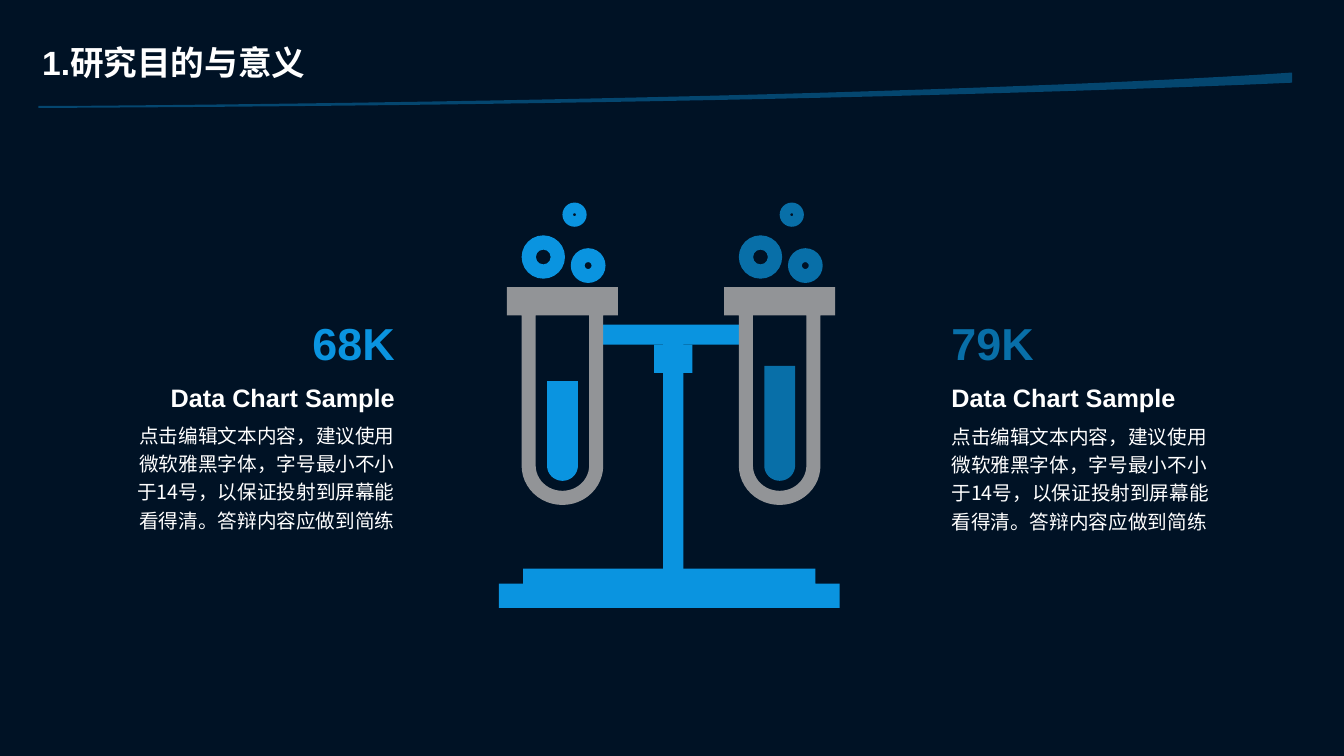
from dataclasses import dataclass
from math import cos, pi, sin

from lxml import etree
from pptx import Presentation
from pptx.dml.color import RGBColor
from pptx.enum.shapes import MSO_SHAPE
from pptx.enum.text import MSO_AUTO_SIZE, PP_ALIGN
from pptx.oxml.ns import qn
from pptx.util import Inches, Pt

RECTANGLE, DONUT = MSO_SHAPE.RECTANGLE, MSO_SHAPE.DONUT
LEFT, RIGHT = PP_ALIGN.LEFT, PP_ALIGN.RIGHT
GROW = MSO_AUTO_SIZE.SHAPE_TO_FIT_TEXT


@dataclass(frozen=True)
class Theme:
    night: str = "001225"
    bright: str = "0A94E0"
    deep: str = "086FA8"
    glass: str = "929497"
    white: str = "FFFFFF"
    latin: str = "Arial"
    asian: str = "Noto Sans CJK SC"
    title: int = 24
    figure: int = 32
    heading: int = 18
    body: int = 14


theme = Theme()
CELL = Inches(0.1)
COLUMNS, ROWS = 133.33, 75
BODY = "点击编辑文本内容，建议使用微软雅黑字体，字号最小不小于14号，以保证投射到屏幕能看得清。答辩内容应做到简练"


def draw_outline(contours, color):
    builder = None
    for contour in contours:
        points = [(x * CELL, y * CELL) for x, y in contour]
        if builder is None:
            builder = page.shapes.build_freeform(*points[0], scale=1.0)
        else:
            builder.move_to(*points[0])
        builder.add_line_segments(points[1:], close=True)
    shape = builder.convert_to_shape()
    shape.shadow.inherit = False
    shape.fill.solid()
    shape.fill.fore_color.rgb = RGBColor.from_string(color)
    shape.line.fill.background()
    return shape


def write_text(frame, text, size, color, font, bold=True, align=LEFT, wrap=False, spacing=None):
    box = page.shapes.add_textbox(*(round(side * CELL) for side in frame))
    box.text_frame.word_wrap = wrap
    box.text_frame.auto_size = GROW
    para = box.text_frame.paragraphs[0]
    para.text = text
    para.alignment = align
    para.line_spacing = spacing
    span = para.runs[0]
    span.font.size = Pt(size)
    span.font.bold = bold
    span.font.name = font
    span.font.color.rgb = RGBColor.from_string(color)
    etree.SubElement(span._r.get_or_add_rPr(), qn("a:ea")).set("typeface", theme.asian)


deck = Presentation()
deck.slide_width = round(COLUMNS * CELL)
deck.slide_height = ROWS * CELL
page = deck.slides.add_slide(deck.slide_layouts[6])
page.background.fill.solid()
page.background.fill.fore_color.rgb = RGBColor.from_string(theme.night)

swoosh = [(128.2, 7.2), (128.2, 8.2)]
lower_edge = ((123.7, 8.4), (75.7, 10.3), (24.3, 10.6), (5.9, 10.7))
upper_edge = ((8.1, 10.5), (81.5, 9.9), (119.7, 7.8), (128.1, 7.2))
for edge, corners in ((lower_edge, [(3.8, 10.7), (3.8, 10.5)]), (upper_edge, [])):
    for step in range(25):
        t = step / 24
        weights = ((1 - t) ** 3, 3 * t * (1 - t) ** 2, 3 * t * t * (1 - t), t ** 3)
        swoosh.append(tuple(sum(w * point[axis] for w, point in zip(weights, edge)) for axis in (0, 1)))
    swoosh += corners
ribbon = draw_outline([swoosh], theme.bright)
ribbon_color = ribbon._element.spPr.find(qn("a:solidFill"))[0]
etree.SubElement(ribbon_color, qn("a:alpha")).set("val", "40000")

for bar in ((59.4, 32.2, 13.9, 2), (65.8, 33.4, 2, 24.6), (64.9, 34.2, 3.8, 2.8)):
    stand = page.shapes.add_shape(RECTANGLE, *(round(side * CELL) for side in bar))
    stand.shadow.inherit = False
    stand.fill.solid()
    stand.fill.fore_color.rgb = RGBColor.from_string(theme.bright)
    stand.line.fill.background()
draw_outline([[(80.9, 57.9), (80.9, 56.4), (51.9, 56.4), (51.9, 57.9),
               (49.5, 57.9), (49.5, 60.3), (83.3, 60.3), (83.3, 57.9)]], theme.bright)

tubes = ((55.8, 37.8, theme.bright), (77.35, 36.3, theme.deep))
bubbles = ((2.55, 26.35, 3.45, 0.4), (-1.9, 25.5, 4.3, 0.33), (1.2, 21.3, 2.4, 0.44))
for center, level, color in tubes:
    outer, inner, liquid = (
        [(center + rx * cos(pi * step / 24), 46.2 + ry * sin(pi * step / 24)) for step in range(25)]
        for rx, ry in ((4.05, 3.9), (2.65, 2.5), (1.53, 1.5)))
    rim = [(center + x, y) for x, y in
           ((-4.05, 31.3), (-5.5, 31.3), (-5.5, 28.5), (5.5, 28.5), (5.5, 31.3), (4.05, 31.3))]
    mouth = [(center - 2.65, 31.3), (center + 2.65, 31.3)]
    draw_outline([outer + rim, inner + mouth], theme.glass)
    draw_outline([liquid + [(center - 1.53, level), (center + 1.53, level)]], color)
    for shift, middle, size, thickness in bubbles:
        frame = (center + shift - size / 2, middle - size / 2, size, size)
        bubble = page.shapes.add_shape(DONUT, *(round(side * CELL) for side in frame))
        bubble.adjustments[0] = thickness
        bubble.shadow.inherit = False
        bubble.fill.solid()
        bubble.fill.fore_color.rgb = RGBColor.from_string(color)
        bubble.line.fill.background()

samples = (("68K", theme.bright, RIGHT, 40.15, 1, 41.1), ("79K", theme.deep, LEFT, 93.4, 0, 41.2))
for figure, color, align, edge, share, body_top in samples:
    write_text((edge - share * 24.5, 37.4, 24.5, 4), "Data Chart Sample",
               theme.heading, theme.white, theme.latin, align=align)
    write_text((edge - share * 10.2, 30.8, 10.2, 6.4), figure,
               theme.figure, color, theme.latin, align=align)
    write_text((edge - share * 28.1, body_top, 28.1, 12.1), BODY, theme.body, theme.white,
               theme.asian, bold=False, align=align, wrap=True, spacing=1.2)

write_text((3.2, 3.7, 30.7, 5), "1.研究目的与意义", theme.title, theme.white, theme.latin, wrap=True)

deck.save("out.pptx")
